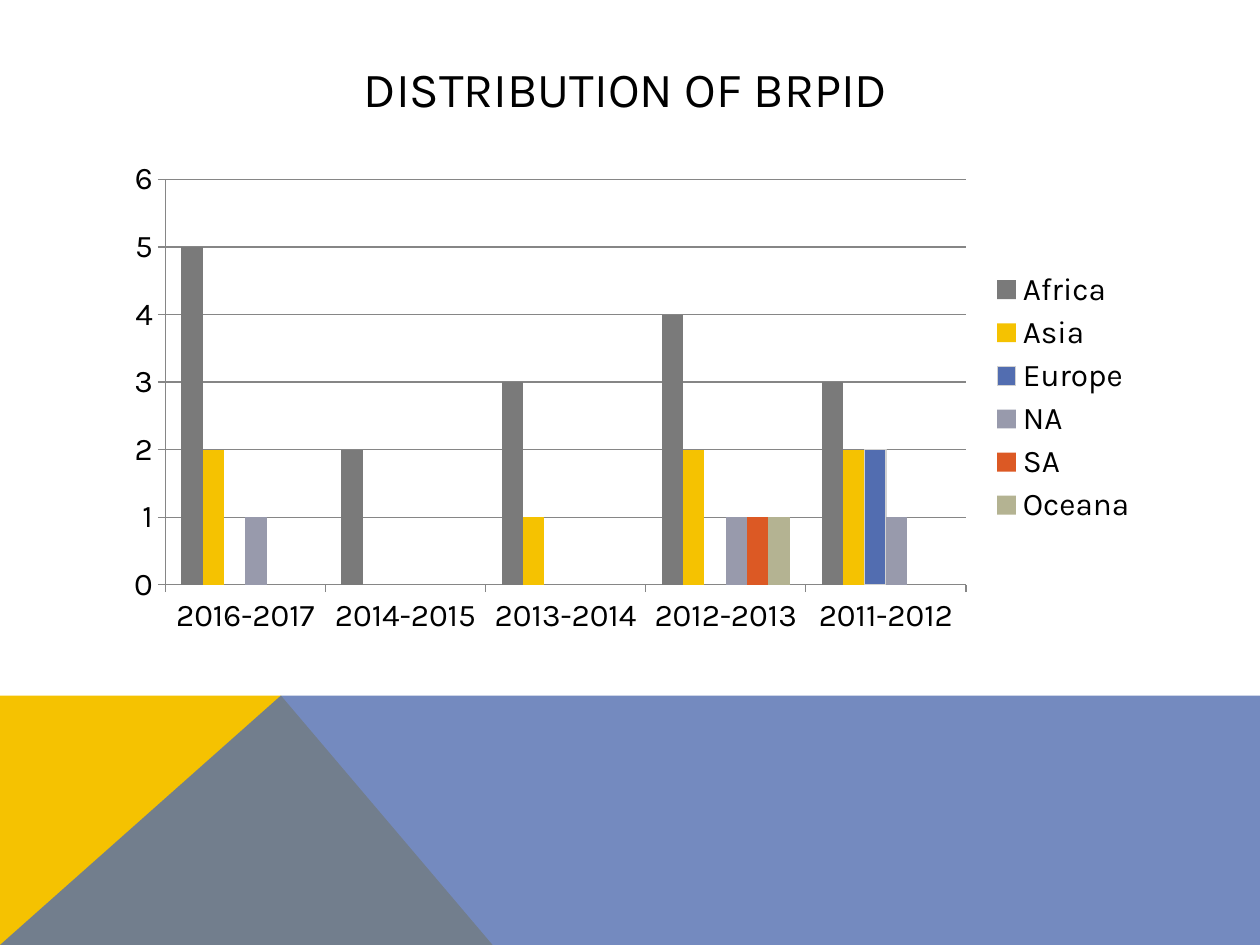
from lxml import etree
from pptx import Presentation
from pptx.chart.data import CategoryChartData
from pptx.dml.color import RGBColor
from pptx.enum.chart import XL_CHART_TYPE, XL_LEGEND_POSITION, XL_TICK_MARK
from pptx.enum.text import MSO_ANCHOR, PP_ALIGN
from pptx.oxml.ns import qn
from pptx.util import Pt

CLUSTERED = XL_CHART_TYPE.COLUMN_CLUSTERED
LEGEND_RIGHT = XL_LEGEND_POSITION.RIGHT
TICK_OUTSIDE = XL_TICK_MARK.OUTSIDE
TICK_NONE = XL_TICK_MARK.NONE
MIDDLE = MSO_ANCHOR.MIDDLE
CENTER = PP_ALIGN.CENTER

WIDTH, HEIGHT = 720, 540
BAND_TOP, PEAK, YELLOW_RIGHT = 397.44, 160.56, 281.52
YELLOW, BLUE, BLACK, AXIS_GRAY = "F5C201", "526DB0", "000000", "868686"

YEARS = ["2016-2017", "2014-2015", "2013-2014", "2012-2013", "2011-2012"]
REGIONS = [
    ("Africa", "7A7A7A", [5, 2, 3, 4, 3]),
    ("Asia", YELLOW, [2, None, 1, 2, 2]),
    ("Europe", BLUE, [None, None, None, None, 2]),
    ("NA", "989AAC", [1, None, None, 1, 1]),
    ("SA", "DC5924", [None, None, None, 1, None]),
    ("Oceana", "B4B392", [None, None, None, 1, None]),
]
OUTLINES = {"Europe": "D2D2D2"}


def color(hex_code):
    return RGBColor.from_string(hex_code)


class SlideBuilder:
    """Holds the text style and the current slide, and draws each kind of element."""

    def __init__(self, slide, font):
        self.slide = slide
        self.font = font

    def style(self, font, size):
        font.name = self.font
        font.size = Pt(size)
        font.color.rgb = color(BLACK)

    def polygon(self, points, fill, opacity=100):
        corners = [(Pt(x), Pt(y)) for x, y in points]
        builder = self.slide.shapes.build_freeform(*corners[0], scale=1.0)
        builder.add_line_segments(corners[1:], close=True)
        shape = builder.convert_to_shape()
        shape.shadow.inherit = False
        shape.line.fill.background()
        shape.fill.solid()
        shape.fill.fore_color.rgb = color(fill)
        if opacity < 100:
            tint = shape.fill._xPr.find(".//" + qn("a:srgbClr"))
            etree.SubElement(tint, qn("a:alpha"), val=str(opacity * 1000))

    def title(self, text, left, top, width, height, size):
        box = self.slide.shapes.add_textbox(Pt(left), Pt(top), Pt(width), Pt(height))
        frame = box.text_frame
        frame.word_wrap = True
        frame.vertical_anchor = MIDDLE
        frame.text = text
        para = frame.paragraphs[0]
        para.alignment = CENTER
        self.style(para.runs[0].font, size)

    def column_chart(self, categories, series, left, top, width, height, size):
        data = CategoryChartData()
        data.categories = categories
        for name, _, values in series:
            data.add_series(name, values)
        chart = self.slide.shapes.add_chart(
            CLUSTERED, Pt(left), Pt(top), Pt(width), Pt(height), data).chart
        self.style(chart.font, size)
        chart.has_title = False
        chart.has_legend = True
        chart.legend.position = LEGEND_RIGHT
        chart.legend.include_in_layout = False

        plot = chart.plots[0]
        plot.vary_by_categories = False
        plot.gap_width = 150
        plot.overlap = 0
        for bars, (name, fill, _) in zip(plot.series, series):
            bars.format.fill.solid()
            bars.format.fill.fore_color.rgb = color(fill)
            if name in OUTLINES:
                self.line(bars.format.line, OUTLINES[name])
            else:
                bars.format.line.fill.background()

        value_axis = chart.value_axis
        value_axis.minimum_scale = 0
        value_axis.maximum_scale = 6
        value_axis.major_unit = 1
        value_axis.has_major_gridlines = True
        self.line(value_axis.major_gridlines.format.line, AXIS_GRAY)
        for axis in (chart.category_axis, value_axis):
            axis.major_tick_mark = TICK_OUTSIDE
            axis.minor_tick_mark = TICK_NONE
            self.line(axis.format.line, AXIS_GRAY)

    def line(self, line, hex_code):
        line.color.rgb = color(hex_code)
        line.width = Pt(0.75)


def main():
    deck = Presentation()
    deck.slide_width, deck.slide_height = Pt(WIDTH), Pt(HEIGHT)
    page = SlideBuilder(deck.slides.add_slide(deck.slide_layouts[6]), "Karla")
    page.polygon([(0, HEIGHT), (0, BAND_TOP), (PEAK, BAND_TOP),
                  (YELLOW_RIGHT, HEIGHT)], YELLOW)
    page.polygon([(0, HEIGHT), (PEAK, BAND_TOP), (WIDTH, BAND_TOP),
                  (WIDTH, HEIGHT)], BLUE, opacity=80)
    page.title("DISTRIBUTION OF BRPID ", 64.8, 28.8, 592, 43.2, size=28)
    page.column_chart(YEARS, REGIONS, 64.8, 86.4, 592.5, 281.5, size=18)
    deck.save("out.pptx")


if __name__ == "__main__":
    main()
